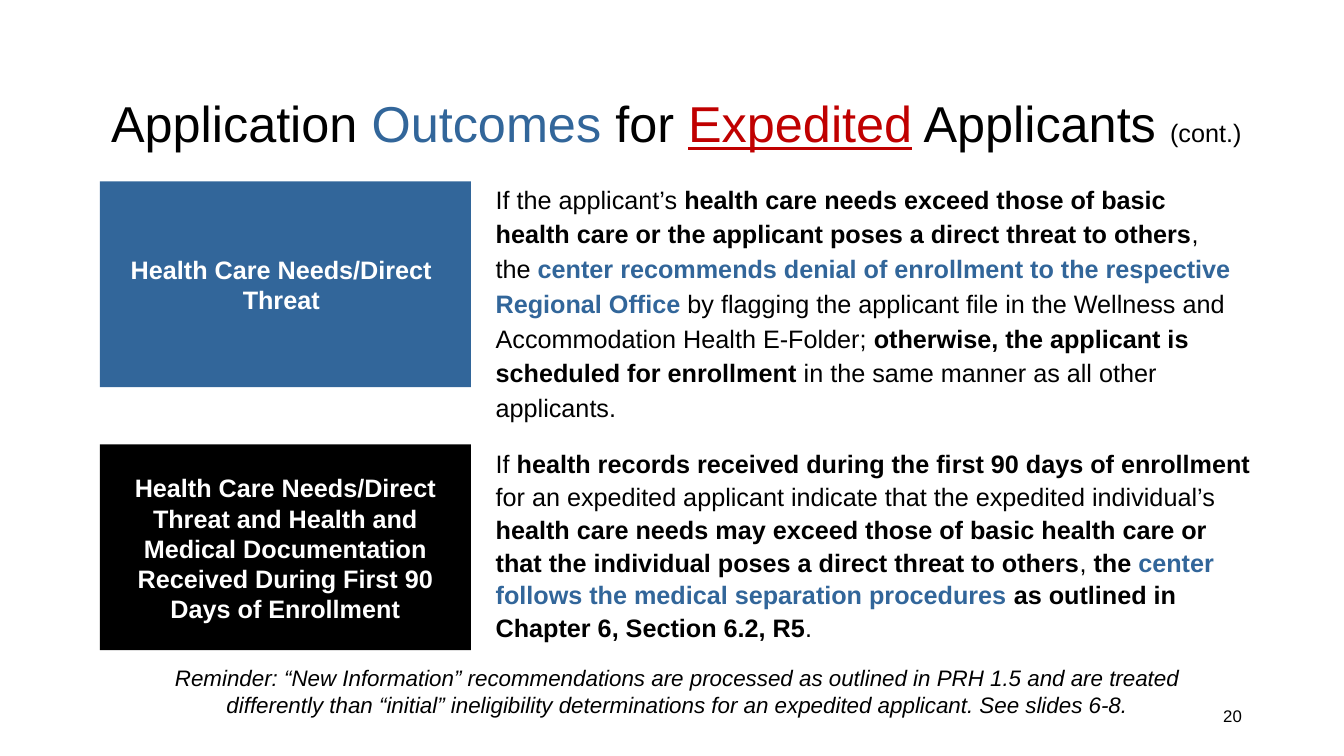
from pptx import Presentation
from pptx.dml.color import RGBColor
from pptx.enum.shapes import MSO_SHAPE
from pptx.enum.text import PP_ALIGN
from pptx.util import Pt

RECT = MSO_SHAPE.RECTANGLE
LEFT, CENTER, RIGHT = PP_ALIGN.LEFT, PP_ALIGN.CENTER, PP_ALIGN.RIGHT
BLACK, WHITE, BLUE, RED = "000000", "FFFFFF", "32669A", "C00000"
BOLD = {"bold": True}
BLUE_BOLD = {"bold": True, "color": BLUE}


def rgb(value):
    """Return the colour for a hex string."""
    return RGBColor.from_string(value)


def add_text(s, box, runs, size=18, align=LEFT, **spacing):
    """Add one wrapped paragraph of (text, format) runs in a box."""
    tf = s.shapes.add_textbox(*map(Pt, box)).text_frame
    tf.word_wrap = True
    p = tf.paragraphs[0]
    p.alignment = align
    for name, value in spacing.items():
        setattr(p, name, value)
    for text, style in runs:
        r = p.add_run()
        r.text = text
        look = {"name": "Arial", "size": Pt(size), "color": BLACK} | style
        r.font.color.rgb = rgb(look.pop("color"))
        for name, value in look.items():
            setattr(r.font, name, value)


def add_title(s, box):
    """Add the slide heading."""
    add_text(s, box, [
        ("Application ", {}),
        ("Outcomes", {"color": BLUE}),
        (" for ", {}),
        ("Expedited", {"color": RED, "underline": True}),
        (" Applicants ", {}),
        ("(cont.)", {"size": Pt(18)}),
    ], size=36, align=CENTER)


def add_outcome(s, box, fill, label, label_box, runs, runs_box, **spacing):
    """Add a filled panel with its label and explanation, offset from the panel."""
    x, y, w, h = box
    panel = s.shapes.add_shape(RECT, *map(Pt, box))
    panel.shadow.inherit = False
    panel.fill.solid()
    panel.fill.fore_color.rgb = rgb(fill)
    panel.line.fill.background()
    dx, dy, label_h = label_box
    add_text(s, (x + dx, y + dy, w, label_h),
             [(label, BOLD | {"color": WHITE})], align=CENTER)
    dx, dy, runs_w, runs_h = runs_box
    add_text(s, (x + dx, y + dy, runs_w, runs_h), runs, **spacing)


def add_footer(s, box):
    """Add the reminder and the slide number."""
    x, y, w, h = box
    add_text(s, box, [(
        "Reminder: “New Information” recommendations are processed as outlined "
        "in PRH 1.5 and are treated differently than “initial” ineligibility "
        "determinations for an expedited applicant. See slides 6-8.",
        {"italic": True})], size=16, align=CENTER)
    add_text(s, (x + w - 184.3, y + 29.5, 216, 28.8), [("20", {})],
             size=12, align=RIGHT)


def main():
    """Build and save the slide."""
    prs = Presentation()
    prs.slide_width, prs.slide_height = Pt(960), Pt(540)
    s = prs.slides.add_slide(prs.slide_layouts[6])
    add_title(s, (61.9, 62.6, 842.4, 51.1))
    add_outcome(
        s, (71.3, 129.6, 265, 146.9), BLUE,
        "Health Care Needs/Direct Threat", (-2.9, 48.2, 51.1),
        [
            ("If the applicant’s ", {}),
            ("health care needs exceed those of basic health care or the "
             "applicant poses a direct threat to others", BOLD),
            (", the ", {}),
            ("center recommends denial of enrollment to the respective "
             "Regional Office", BLUE_BOLD),
            (" by flagging the applicant file in the Wellness and "
             "Accommodation Health E-Folder; ", {}),
            ("otherwise, the applicant is scheduled for enrollment ", BOLD),
            ("in the same manner as all other applicants.", {}),
        ], (275.7, -5, 544.3, 181.4), line_spacing=1.15, space_after=Pt(10))
    add_outcome(
        s, (71.3, 317.5, 265, 146.9), BLACK,
        "Health Care Needs/Direct Threat and Health and Medical Documentation "
        "Received During First 90 Days of Enrollment", (0, 16.6, 116.6),
        [
            ("If ", {}),
            ("health records received during the first 90 days of enrollment",
             BOLD),
            (" for an expedited applicant indicate that the expedited "
             "individual’s ", {}),
            ("health care needs may exceed those of basic health care or that "
             "the individual poses a direct threat to others", BOLD),
            (", ", {}),
            ("the ", BOLD),
            ("center follows the medical separation procedures ", BLUE_BOLD),
            ("as outlined in Chapter 6, Section 6.2, R5", BOLD),
            (".", {}),
        ], (275.7, -2.9, 557.3, 148.3), line_spacing=1.09, space_before=Pt(6))
    add_footer(s, (105.1, 470.9, 757.4, 46.1))
    prs.save("out.pptx")


if __name__ == "__main__":
    main()
